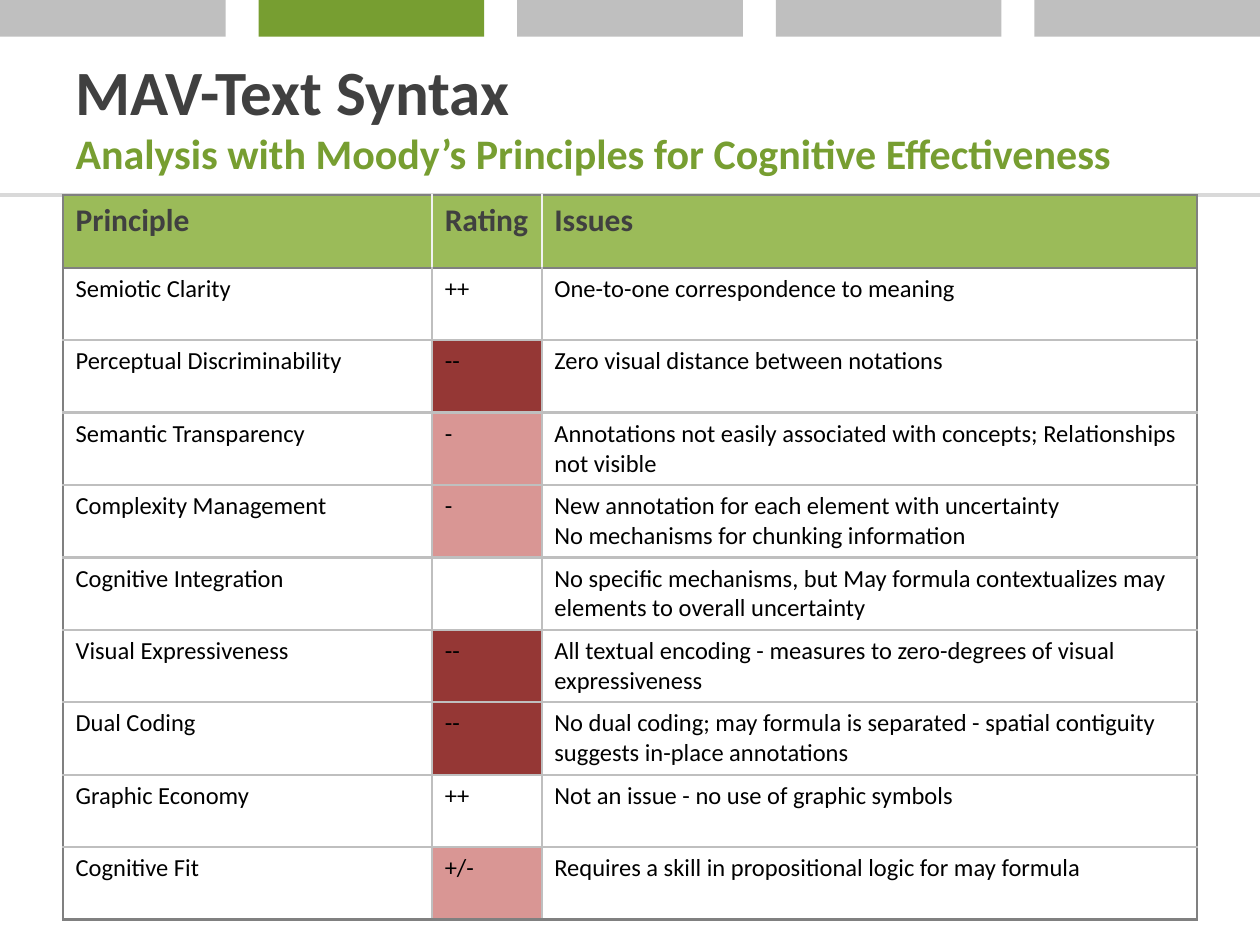
from dataclasses import dataclass

import lxml.etree
import pptx
import pptx.dml.color
import pptx.enum.shapes
import pptx.enum.text
import pptx.oxml.ns
import pptx.util
from pptx.util import Inches

qn = pptx.oxml.ns.qn


@dataclass(frozen=True)
class Theme:
    font: str = "Calibri"
    title_size: int = 36
    subtitle_size: int = 24
    header_size: int = 18
    body_size: int = 14
    border_width: float = 1.5
    rule_width: float = 2.25
    dark: str = "404040"
    black: str = "000000"
    white: str = "FFFFFF"
    green: str = "779E31"
    header_fill: str = "9BBB59"
    header_divider: str = "F2F2F2"
    outline: str = "808080"
    gray: str = "BFBFBF"
    rule: str = "D9D9D9"
    poor: str = "D99694"
    very_poor: str = "953735"


def rgb(color):
    return pptx.dml.color.RGBColor.from_string(color)


def add_span(para, text, *, font, size, color, bold=False):
    span = para.add_run()
    span.text = text
    span.font.name = font
    span.font.size = pptx.util.Pt(size)
    span.font.bold = bold
    span.font.color.rgb = rgb(color)
    return span


class SlideBuilder:
    def __init__(self, slide, theme):
        self.slide = slide
        self.theme = theme

    def rule(self, y, width):
        line = self.slide.shapes.add_connector(
            pptx.enum.shapes.MSO_CONNECTOR.STRAIGHT, 0, Inches(y), Inches(width), Inches(y))
        line.line.color.rgb = rgb(self.theme.rule)
        line.line.width = pptx.util.Pt(self.theme.rule_width)
        lxml.etree.SubElement(line._element.spPr, qn("a:effectLst"))

    def bar(self, left, top, width, height, color):
        box = self.slide.shapes.add_shape(
            pptx.enum.shapes.MSO_SHAPE.RECTANGLE,
            Inches(left), Inches(top), Inches(width), Inches(height))
        box.shadow.inherit = False
        box.fill.solid()
        box.fill.fore_color.rgb = rgb(color)
        box.line.fill.background()

    def title(self, text, subtitle, left, top, width, height):
        theme = self.theme
        box = self.slide.shapes.title
        box.left, box.top = Inches(left), Inches(top)
        box.width, box.height = Inches(width), Inches(height)
        frame = box.text_frame
        frame.word_wrap = True
        frame.auto_size = pptx.enum.text.MSO_AUTO_SIZE.NONE
        frame.vertical_anchor = pptx.enum.text.MSO_ANCHOR.MIDDLE
        para = frame.paragraphs[0]
        para.alignment = pptx.enum.text.PP_ALIGN.LEFT
        add_span(para, text, font=theme.font, size=theme.title_size, color=theme.dark, bold=True)
        # The break takes the title size, so it does not stretch the first line
        para.add_line_break()
        lxml.etree.SubElement(para._p[-1], qn("a:rPr"), sz=str(theme.title_size * 100))
        add_span(para, subtitle, font=theme.font, size=theme.subtitle_size,
                 color=theme.green, bold=True)

    def borders(self, cell, colors):
        properties = cell._tc.get_or_add_tcPr()
        width = str(pptx.util.Pt(self.theme.border_width))
        for index, (side, color) in enumerate(zip("LRTB", colors)):
            line = lxml.etree.Element(qn(f"a:ln{side}"), w=width)
            fill = lxml.etree.SubElement(line, qn("a:solidFill"))
            lxml.etree.SubElement(fill, qn("a:srgbClr"), val=color)
            properties.insert(index, line)

    def cell(self, cell, text, fill, **text_format):
        cell.fill.solid()
        cell.fill.fore_color.rgb = rgb(fill)
        if not text:
            return
        frame = cell.text_frame
        for index, line in enumerate(text.split("\n")):
            para = frame.add_paragraph() if index else frame.paragraphs[0]
            add_span(para, line, font=self.theme.font, **text_format)

    def table(self, rows, left, top, column_widths, row_height, rating_fills):
        theme = self.theme
        last_row, last_column = len(rows) - 1, len(column_widths) - 1
        table = self.slide.shapes.add_table(
            len(rows), len(column_widths), Inches(left), Inches(top),
            Inches(sum(column_widths)), Inches(row_height * len(rows))).table
        for column, width in zip(table.columns, column_widths):
            column.width = Inches(width)
        for r, values in enumerate(rows):
            table.rows[r].height = Inches(row_height)
            header = r == 0
            inner = theme.header_divider if header else theme.gray
            for c, text in enumerate(values):
                cell = table.cell(r, c)
                if header:
                    self.cell(cell, text, theme.header_fill, size=theme.header_size,
                              color=theme.dark, bold=True)
                else:
                    fill = rating_fills.get(text, theme.white) if c == 1 else theme.white
                    self.cell(cell, text, fill, size=theme.body_size, color=theme.black)
                self.borders(cell, (
                    theme.outline if c == 0 else inner,
                    theme.outline if c == last_column else inner,
                    theme.outline if r <= 1 else theme.gray,
                    theme.outline if r in (0, last_row) else theme.gray))


ROWS = [
    ("Principle", "Rating", "Issues"),
    ("Semiotic Clarity", "++", "One-to-one correspondence to meaning"),
    ("Perceptual Discriminability", "--", "Zero visual distance between notations"),
    ("Semantic Transparency", "-",
     "Annotations not easily associated with concepts; Relationships not visible"),
    ("Complexity Management", "-",
     "New annotation for each element with uncertainty\n"
     "No mechanisms for chunking information"),
    ("Cognitive Integration", "",
     "No specific mechanisms, but May formula contextualizes may elements "
     "to overall uncertainty"),
    ("Visual Expressiveness", "--",
     "All textual encoding - measures to zero-degrees of visual expressiveness"),
    ("Dual Coding", "--",
     "No dual coding; may formula is separated - spatial contiguity suggests "
     "in-place annotations"),
    ("Graphic Economy", "++", "Not an issue - no use of graphic symbols"),
    ("Cognitive Fit", "+/-", "Requires a skill in propositional logic for may formula"),
]


def main():
    theme = Theme()
    deck = pptx.Presentation()
    deck.slide_width, deck.slide_height = Inches(10), Inches(7.5)
    page = SlideBuilder(deck.slides.add_slide(deck.slide_layouts[5]), theme)

    # Rule under the title
    page.rule(1.55, 10)

    # Section progress bars, with the current section in green
    bar_count, bar_width, current = 5, 1.79, 1
    step = (10 - bar_width) / (bar_count - 1)
    for index in range(bar_count):
        page.bar(index * step, 0, bar_width, 0.29,
                 theme.green if index == current else theme.gray)

    # Title and subtitle
    page.title("MAV-Text Syntax", "Analysis with Moody’s Principles for Cognitive Effectiveness",
               0.5, 0.29, 9, 1.25)

    # Ratings table
    page.table(ROWS, 0.5, 1.55, (2.93, 0.87, 5.2), 0.575,
               {"--": theme.very_poor, "-": theme.poor, "+/-": theme.poor})

    deck.save("out.pptx")


if __name__ == "__main__":
    main()
